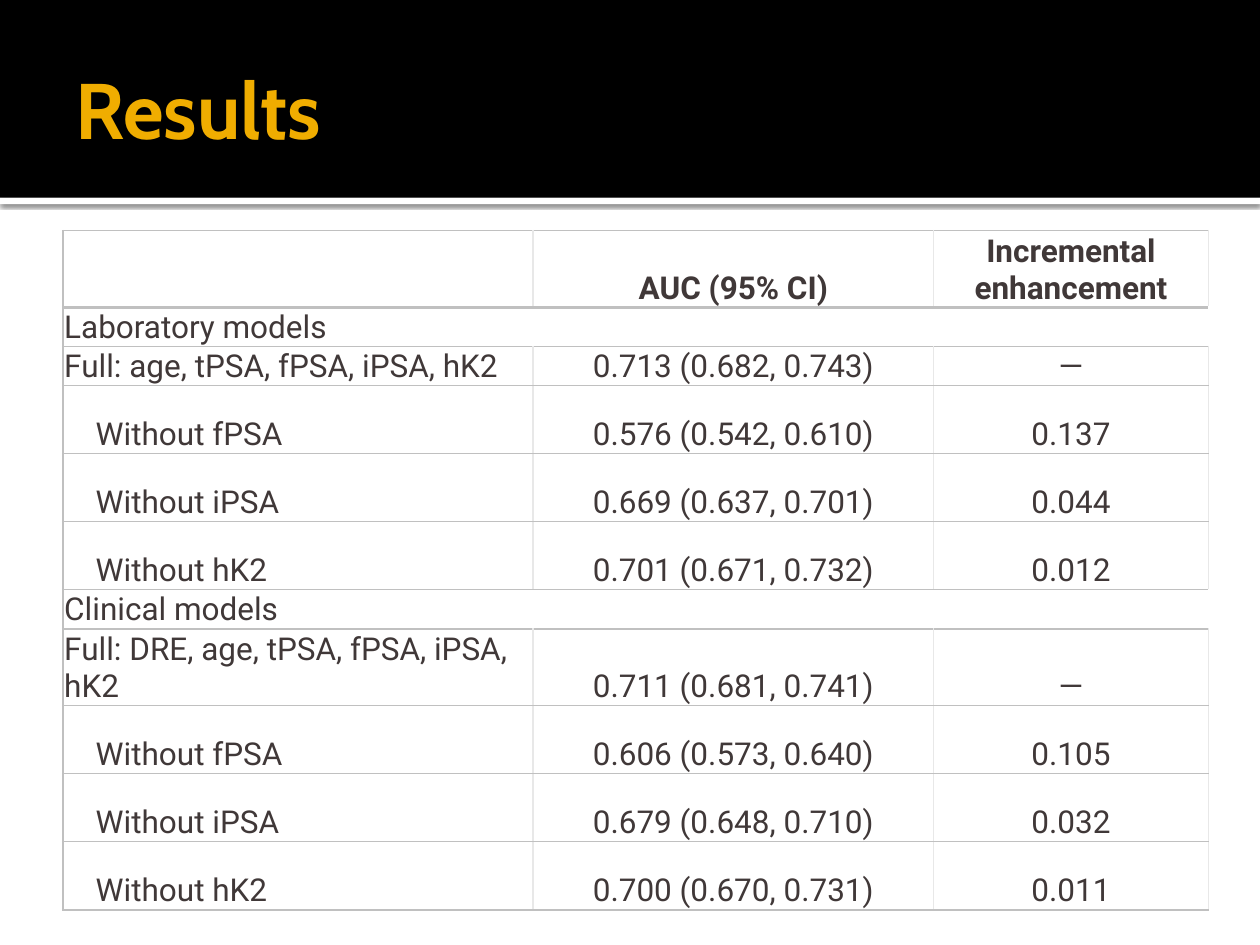
from lxml import etree
from pptx import Presentation
from pptx.dml.color import RGBColor
from pptx.enum.shapes import MSO_SHAPE
from pptx.enum.text import MSO_ANCHOR, PP_ALIGN
from pptx.oxml import parse_xml
from pptx.oxml.ns import nsdecls, qn
from pptx.util import Inches, Pt

COLORS = {"black": "000000", "white": "FFFFFF", "title": "F0AD00",
          "text": "403838", "rule": "C0C0C0", "faint": "E8E8E8"}
COLS = [3.73, 3.18, 2.18]
ROWS = [
    (0.38, ["", "AUC (95% CI)", "Incremental enhancement"]),
    (0.23, ["Laboratory models"]),
    (0.22, ["Full: age, tPSA, fPSA, iPSA, hK2", "0.713 (0.682, 0.743)", "—"]),
    (0.54, ["Without fPSA", "0.576 (0.542, 0.610)", "0.137"]),
    (0.54, ["Without iPSA", "0.669 (0.637, 0.701)", "0.044"]),
    (0.54, ["Without hK2", "0.701 (0.671, 0.732)", "0.012"]),
    (0.22, ["Clinical models"]),
    (0.54, ["Full: DRE, age, tPSA, fPSA, iPSA, hK2", "0.711 (0.681, 0.741)", "—"]),
    (0.54, ["Without fPSA", "0.606 (0.573, 0.640)", "0.105"]),
    (0.54, ["Without iPSA", "0.679 (0.648, 0.710)", "0.032"]),
    (0.54, ["Without hK2", "0.700 (0.670, 0.731)", "0.011"]),
]


def rgb(name):
    """Return the named colour."""
    return RGBColor.from_string(COLORS[name])


def add_run(p, text, font, size, color, bold):
    """Add one formatted run to a paragraph."""
    r = p.add_run()
    r.text = text
    r.font.name, r.font.size, r.font.bold = font, Pt(size), bold
    r.font.color.rgb = rgb(color)


def add_band(s, x, y, w, h, color):
    """Add a plain filled band."""
    sp = s.shapes.add_shape(MSO_SHAPE.RECTANGLE, Inches(x), Inches(y), Inches(w), Inches(h))
    sp.shadow.inherit = False
    sp.fill.solid()
    sp.fill.fore_color.rgb = rgb(color)
    sp.line.fill.background()
    return sp


def add_header(s, x, y, w, h, title):
    """Add the black header, its shadowed edge and the title."""
    edge = add_band(s, x, y + h, w, 0.05, "white")
    effects = edge._element.spPr.find(qn("a:effectLst"))
    effects.append(parse_xml(
        f'<a:outerShdw {nsdecls("a")} blurRad="{Pt(2.5)}" dist="{Pt(0.8)}" dir="5400000" '
        f'algn="t" rotWithShape="0"><a:srgbClr val="{COLORS["black"]}">'
        '<a:alpha val="60000"/></a:srgbClr></a:outerShdw>'))
    add_band(s, x, y, w, h, "black")
    sp = s.shapes.add_textbox(Inches(x + 0.5), Inches(y + 0.17), Inches(w - 1), Inches(h - 0.2))
    tf = sp.text_frame
    tf.word_wrap = True
    tf.vertical_anchor = MSO_ANCHOR.MIDDLE
    tf.margin_right = Inches(0.05)
    add_run(tf.paragraphs[0], title, "Cabin", 45, "title", True)


def set_borders(cell, borders):
    """Draw cell borders given as (side, colour, width) in L, R, T, B order."""
    tcPr = cell._tc.get_or_add_tcPr()
    for i, (side, color, width) in enumerate(borders):
        ln = etree.Element(qn(f"a:ln{side}"), w=str(Pt(width)))
        fill = etree.SubElement(ln, qn("a:solidFill"))
        etree.SubElement(fill, qn("a:srgbClr"), val=COLORS[color])
        tcPr.insert(i, ln)


def fill_cell(cell, text, first, header):
    """Set the fill, margins and text of one cell."""
    cell.fill.solid()
    cell.fill.fore_color.rgb = rgb("white")
    cell.vertical_anchor = MSO_ANCHOR.BOTTOM
    cell.margin_left = cell.margin_right = cell.margin_top = Inches(0.01)
    cell.margin_bottom = 0
    p = cell.text_frame.paragraphs[0]
    p.alignment = PP_ALIGN.LEFT if first else PP_ALIGN.CENTER
    if text.startswith("Without"):
        p._p.get_or_add_pPr().set("marL", str(Inches(0.25)))
    if text:
        add_run(p, text, "Roboto", 18, "text", header)


def add_results(s, x, y, w, h):
    """Add the table of model results."""
    frame = s.shapes.add_table(len(ROWS), len(COLS), Inches(x), Inches(y), Inches(w), Inches(h))
    table = frame.table
    table.horz_banding = table.first_row = False
    for col, width in zip(table.columns, COLS):
        col.width = Inches(width)
    last = len(ROWS) - 1
    for i, (height, texts) in enumerate(ROWS):
        table.rows[i].height = Inches(height)
        section = len(texts) == 1
        if section:
            table.cell(i, 0).merge(table.cell(i, len(COLS) - 1))
        for j, text in enumerate(texts):
            cell = table.cell(i, j)
            fill_cell(cell, text, j == 0, i == 0)
            left = ("L", "faint", 1) if j else ("L", "rule", 1.5)
            right = [] if section else [("R", "faint", 1)]
            top = ("T", "rule", 1.5 if i == 1 else 1)
            bottom = ("B", "rule", 1.5 if i in (0, last) else 1)
            set_borders(cell, [left, *right, top, bottom])


def main():
    """Build and save the slide."""
    prs = Presentation()
    prs.slide_width, prs.slide_height = Inches(10), Inches(7.5)
    s = prs.slides.add_slide(prs.slide_layouts[6])
    add_header(s, 0, 0, 10, 1.57, "Results")
    add_results(s, 0.5, 1.83, 9.08, 5.4)
    prs.save("out.pptx")


if __name__ == "__main__":
    main()
